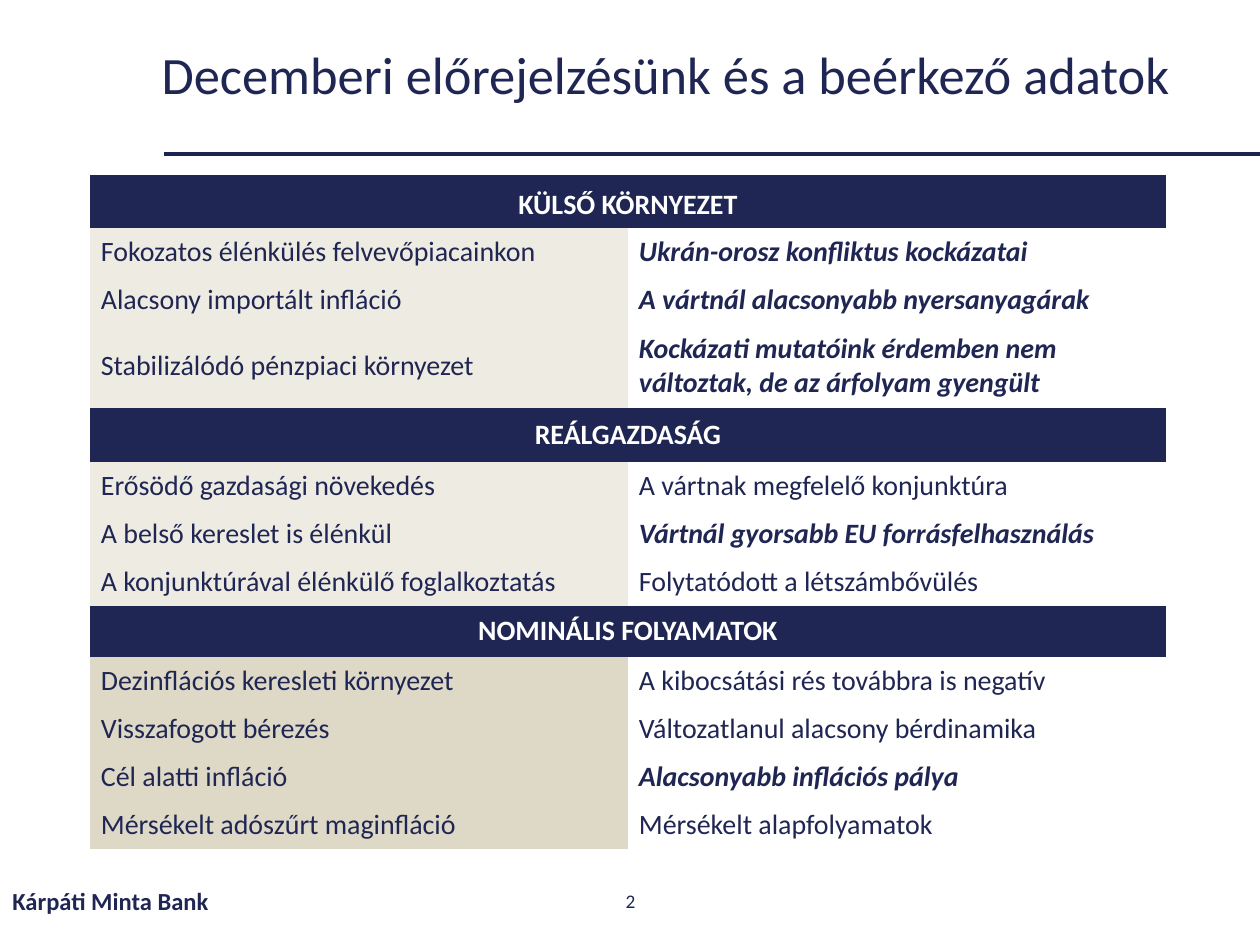
from dataclasses import dataclass

from lxml.etree import SubElement
from pptx import Presentation
from pptx.dml.color import RGBColor
from pptx.enum.shapes import MSO_CONNECTOR
from pptx.enum.text import MSO_ANCHOR as ANCHOR, MSO_AUTO_SIZE, PP_ALIGN as ALIGN
from pptx.oxml.ns import qn
from pptx.util import Emu, Pt

PX_PER_INCH = 126
FONT = "Calibri"
NO_STYLE_NO_GRID = "{2D5ABB26-0587-4C30-8999-92F81FD0307C}"
COLORS = {
    "navy": "202653",
    "rule": "1E2452",
    "white": "FFFFFF",
    "light": "EEECE2",
    "sand": "DED9C6",
}


@dataclass
class Row:
    forecast: str
    data: str
    changed: bool = False
    height: int = 48


@dataclass
class Section:
    heading: str
    height: int
    fill: str
    rows: list[Row]
    anchor: ANCHOR = ANCHOR.MIDDLE


SECTIONS = [
    Section("KÜLSŐ KÖRNYEZET", 53, "light", [
        Row("Fokozatos élénkülés felvevőpiacainkon", "Ukrán-orosz konfliktus kockázatai", True),
        Row("Alacsony importált infláció", "A vártnál alacsonyabb nyersanyagárak", True),
        Row("Stabilizálódó pénzpiaci környezet",
            "Kockázati mutatóink érdemben nem változtak, de az árfolyam gyengült", True, 84),
    ], ANCHOR.BOTTOM),
    Section("REÁLGAZDASÁG", 54, "light", [
        Row("Erősödő gazdasági növekedés", "A vártnak megfelelő konjunktúra"),
        Row("A belső kereslet is élénkül", "Vártnál gyorsabb EU forrásfelhasználás", True),
        Row("A konjunktúrával élénkülő foglalkoztatás", "Folytatódott a létszámbővülés"),
    ]),
    Section("NOMINÁLIS FOLYAMATOK", 51, "sand", [
        Row("Dezinflációs keresleti környezet", "A kibocsátási rés továbbra is negatív"),
        Row("Visszafogott bérezés", "Változatlanul alacsony bérdinamika"),
        Row("Cél alatti infláció", "Alacsonyabb inflációs pálya", True),
        Row("Mérsékelt adószűrt maginfláció", "Mérsékelt alapfolyamatok"),
    ]),
]


def px(n: int) -> Emu:
    return Emu(round(n * 914400 / PX_PER_INCH))


def rgb(name: str) -> RGBColor:
    return RGBColor.from_string(COLORS[name])


def write(tf, text: str, size: int, color: str = "navy", bold: bool = False,
          italic: bool = False, align: ALIGN = ALIGN.LEFT) -> None:
    tf.text = text
    p = tf.paragraphs[0]
    p.alignment = align
    font = p.runs[0].font
    font.name, font.size, font.bold, font.italic = FONT, Pt(size), bold, italic
    font.color.rgb = rgb(color)


def add_title(slide, text: str) -> None:
    sp = slide.shapes.title
    sp.left, sp.top, sp.width, sp.height = px(149), px(25), px(1086), px(105)
    tf = sp.text_frame
    tf.auto_size = MSO_AUTO_SIZE.NONE
    tf.vertical_anchor = ANCHOR.MIDDLE
    write(tf, text, 30)
    tf.paragraphs[0].line_spacing = 0.9


def add_rule(slide) -> None:
    line = slide.shapes.add_connector(MSO_CONNECTOR.STRAIGHT, px(164), px(154), px(1260), px(154))
    line.line.color.rgb = rgb("rule")
    line.line.width = Pt(2.25)
    SubElement(line._element.spPr, qn("a:effectLst"))


def add_footer(slide, text: str, left: int, width: int, size: int, **style) -> None:
    tf = slide.shapes.add_textbox(px(left), px(876), px(width), px(50)).text_frame
    tf.word_wrap = True
    tf.vertical_anchor = ANCHOR.MIDDLE
    write(tf, text, size, **style)


def fill_cell(cell, text: str, fill: str | None = None, anchor: ANCHOR = ANCHOR.MIDDLE,
              **style) -> None:
    cell.margin_left = cell.margin_right = px(11)
    cell.margin_top = cell.margin_bottom = px(6)
    cell.vertical_anchor = anchor
    if fill:
        cell.fill.solid()
        cell.fill.fore_color.rgb = rgb(fill)
    else:
        cell.fill.background()
    write(cell.text_frame, text, 16, **style)


def add_forecast_table(slide, sections: list[Section]) -> None:
    heights = [h for s in sections for h in (s.height, *(row.height for row in s.rows))]
    table = slide.shapes.add_table(
        len(heights), 2, px(90), px(175), px(1076), px(sum(heights))).table
    table.first_row = table.horz_banding = False
    table._tbl.tblPr.find(qn("a:tableStyleId")).text = NO_STYLE_NO_GRID
    for table_row, height in zip(table.rows, heights):
        table_row.height = px(height)

    i = 0
    for section in sections:
        heading = table.cell(i, 0)
        heading.merge(table.cell(i, 1))
        fill_cell(heading, section.heading, "navy", section.anchor,
                  color="white", bold=True, align=ALIGN.CENTER)
        for i, row in enumerate(section.rows, i + 1):
            fill_cell(table.cell(i, 0), row.forecast, section.fill)
            fill_cell(table.cell(i, 1), row.data, bold=row.changed, italic=row.changed)
        i += 1


def main() -> None:
    prs = Presentation()
    prs.slide_width, prs.slide_height = px(1260), px(945)
    slide = prs.slides.add_slide(prs.slide_layouts[5])
    add_rule(slide)
    add_title(slide, "Decemberi előrejelzésünk és a beérkező adatok")
    add_footer(slide, "Kárpáti Minta Bank", 0, 426, 14, bold=True)
    add_footer(slide, "2", 489, 283, 11, align=ALIGN.CENTER)
    add_forecast_table(slide, SECTIONS)
    prs.save("out.pptx")


if __name__ == "__main__":
    main()
